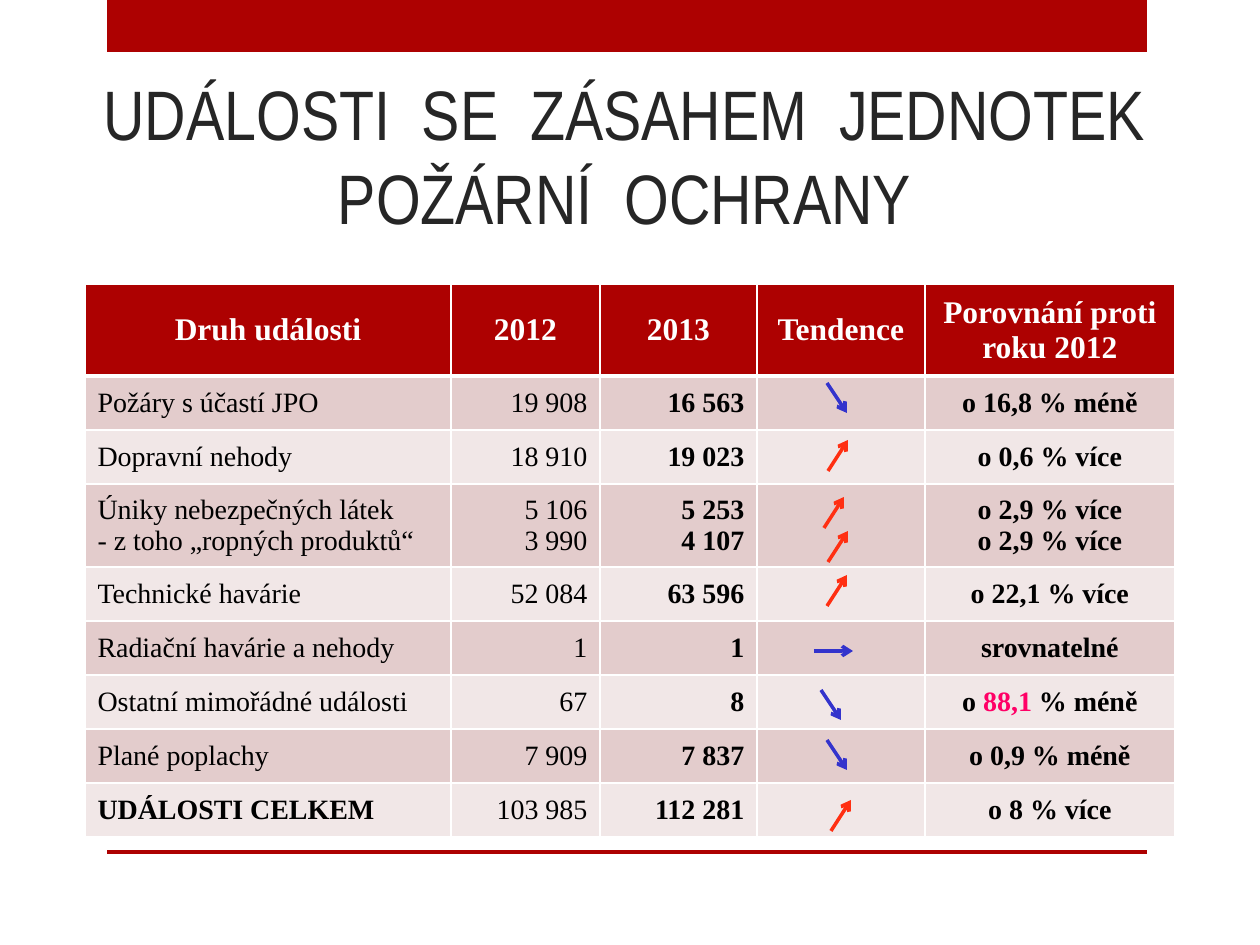
from pptx import Presentation
from pptx.dml.color import RGBColor
from pptx.enum.shapes import MSO_CONNECTOR as Connector, MSO_SHAPE as Shape
from pptx.enum.text import MSO_ANCHOR as Anchor, PP_ALIGN as Align
from pptx.oxml.ns import qn
from pptx.util import Emu, Pt
from lxml.etree import SubElement

RED, WHITE, BLACK, PINK = "AD0101", "FFFFFF", "000000", "FF0066"
BANDS = ["E3CCCC", "F1E7E7"]
BLUE, ORANGE = "3333CC", "FF2F12"

COLUMN_WIDTHS = [366, 149, 157, 168, 250]
HEADER_HEIGHT, LINE_HEIGHT, TWO_LINE_HEIGHT = 92, 54, 83
HEADER = ["Druh události", "2012", "2013", "Tendence", "Porovnání proti roku 2012"]
# A line break starts a new paragraph; text between bars is highlighted.
EVENTS = [
    ["Požáry s účastí JPO", "19 908", "16 563", "", "o 16,8 % méně"],
    ["Dopravní nehody", "18 910", "19 023", "", "o 0,6 % více"],
    ["Úniky nebezpečných látek\n- z toho „ropných produktů“", "5 106\n3 990",
     "5 253\n4 107", "", "o 2,9 % více\no 2,9 % více"],
    ["Technické havárie", "52 084", "63 596", "", "o 22,1 % více"],
    ["Radiační havárie a nehody", "1", "1", "", "srovnatelné"],
    ["Ostatní mimořádné události", "67", "8", "", "o |88,1| % méně"],
    ["Plané poplachy", "7 909", "7 837", "", "o 0,9 % méně"],
    ["UDÁLOSTI CELKEM", "103 985", "112 281", "", "o 8 % více"],
]
COLUMN_ALIGNS = [Align.LEFT, Align.RIGHT, Align.RIGHT, Align.CENTER, Align.CENTER]
BOLD_COLUMNS = {2, 4}

# Each trend: run and rise of the arrow, colour, starting points.
TRENDS = [
    (20, 30, BLUE, [(827, 383), (821, 690), (827, 740)]),
    (20, -31, ORANGE, [(828, 471), (824, 528), (828, 562), (827, 606), (831, 831)]),
    (39, 0, BLUE, [(814, 651)]),
]


def px(length):
    return Emu(round(length * 914400 / 126))


def color(value):
    return RGBColor.from_string(value)


class EventSlide:
    title_font = "Arial Narrow"
    table_font = "Times New Roman"

    def __init__(self, deck):
        self.page = deck.slides.add_slide(deck.slide_layouts[6])
        self.shapes = self.page.shapes

    def bar(self, left, top, width, height):
        bar = self.shapes.add_shape(
            Shape.RECTANGLE, px(left), px(top), px(width), px(height))
        bar.shadow.inherit = False
        bar.fill.solid()
        bar.fill.fore_color.rgb = color(RED)
        bar.line.fill.background()

    def style(self, para, align, name, size, ink, bold=False):
        para.alignment = align
        font = para.font
        font.name, font.size, font.bold = name, Pt(size), bold
        font.color.rgb = color(ink)

    def title(self, text, left, top, width, height):
        box = self.shapes.add_textbox(px(left), px(top), px(width), px(height))
        frame = box.text_frame
        frame.word_wrap = True
        frame.vertical_anchor = Anchor.BOTTOM
        frame.text = text
        self.style(frame.paragraphs[0], Align.CENTER, self.title_font, 40, "262626")

    def border(self, cell, side, width):
        line = SubElement(cell._tc.get_or_add_tcPr(), qn(f"a:ln{side}"), w=str(Pt(width)))
        SubElement(SubElement(line, qn("a:solidFill")), qn("a:srgbClr"), val=WHITE)

    def cell(self, cell, text, fill, align, size, ink, bold, bottom=1, top=1):
        for side, width in zip("LRTB", (1, 1, top, bottom)):
            self.border(cell, side, width)
        cell.fill.solid()
        cell.fill.fore_color.rgb = color(fill)
        cell.vertical_anchor = Anchor.MIDDLE
        frame = cell.text_frame
        for index, line in enumerate(text.split("\n")):
            para = frame.add_paragraph() if index else frame.paragraphs[0]
            self.style(para, align, self.table_font, size, ink, bold)
            for part, words in enumerate(line.split("|")):
                if words:
                    span = para.add_run()
                    span.text = words
                    if part % 2:
                        span.font.color.rgb = color(PINK)

    def table(self, left, top):
        heights = [HEADER_HEIGHT] + [
            TWO_LINE_HEIGHT if "\n" in event[0] else LINE_HEIGHT for event in EVENTS]
        table = self.shapes.add_table(
            len(heights), len(COLUMN_WIDTHS), px(left), px(top),
            px(sum(COLUMN_WIDTHS)), px(sum(heights))).table
        for column, width in zip(table.columns, COLUMN_WIDTHS):
            column.width = px(width)
        for row, height in zip(table.rows, heights):
            row.height = px(height)
        for column, text in enumerate(HEADER):
            self.cell(table.cell(0, column), text, RED, Align.CENTER, 18, WHITE, True,
                      bottom=3)
        for row, event in enumerate(EVENTS, 1):
            for column, text in enumerate(event):
                bold = column in BOLD_COLUMNS or (column == 0 and row == len(EVENTS))
                self.cell(table.cell(row, column), text, BANDS[(row - 1) % 2],
                          COLUMN_ALIGNS[column], 16, BLACK, bold,
                          top=3 if row == 1 else 1)

    def arrow(self, x, y, run, rise, ink):
        arrow = self.shapes.add_connector(
            Connector.STRAIGHT, px(x), px(y), px(x + run), px(y + rise))
        arrow.line.color.rgb = color(ink)
        arrow.line.width = Pt(2)
        SubElement(arrow.line._get_or_add_ln(), qn("a:tailEnd"), type="arrow")
        SubElement(arrow._element.spPr, qn("a:effectLst"))


def main():
    deck = Presentation()
    deck.slide_width, deck.slide_height = px(1260), px(945)
    slide = EventSlide(deck)
    slide.bar(107, 0, 1040, 52)
    slide.bar(107, 850, 1040, 4)
    slide.title("UDÁLOSTI  SE  ZÁSAHEM  JEDNOTEK POŽÁRNÍ  OCHRANY", 79, 37, 1091, 208)
    slide.table(85, 284)
    for run, rise, ink, starts in TRENDS:
        for x, y in starts:
            slide.arrow(x, y, run, rise, ink)
    deck.save("out.pptx")


if __name__ == "__main__":
    main()
